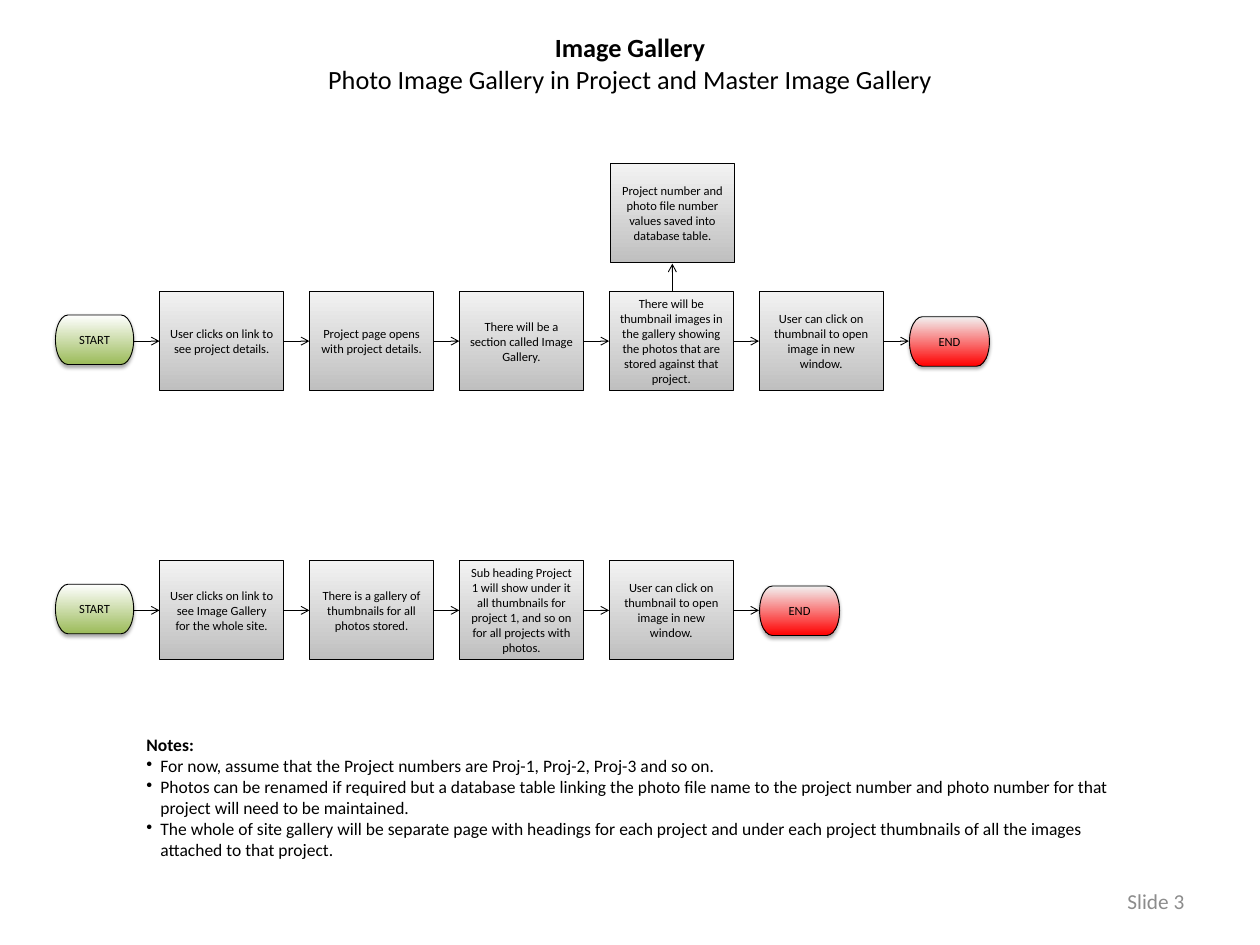
from lxml import etree
from pptx import Presentation
from pptx.dml.color import RGBColor
from pptx.enum.shapes import MSO_CONNECTOR, MSO_SHAPE
from pptx.enum.text import MSO_ANCHOR, MSO_AUTO_SIZE, PP_ALIGN
from pptx.oxml import parse_xml
from pptx.oxml.ns import qn
from pptx.util import Pt

PROCESS = MSO_SHAPE.FLOWCHART_PROCESS
TERMINATOR = MSO_SHAPE.FLOWCHART_TERMINATOR
STRAIGHT = MSO_CONNECTOR.STRAIGHT
LEFT, CENTER, RIGHT = PP_ALIGN.LEFT, PP_ALIGN.CENTER, PP_ALIGN.RIGHT
TOP, MIDDLE = MSO_ANCHOR.TOP, MSO_ANCHOR.MIDDLE
NO_FIT = MSO_AUTO_SIZE.NONE

BLACK = RGBColor(0x00, 0x00, 0x00)
WHITE = RGBColor(0xFF, 0xFF, 0xFF)
GREEN = RGBColor(0x9B, 0xBB, 0x59)
RED = RGBColor(0xFF, 0x00, 0x00)
PALE_GRAY = RGBColor(0xF2, 0xF2, 0xF2)
MID_GRAY = RGBColor(0xBF, 0xBF, 0xBF)
NUMBER_GRAY = RGBColor(0x8C, 0x8C, 0x8C)

FONT = "Calibri"
STEP_WIDTH, STEP_HEIGHT, STEP_PITCH = 99.4, 79.2, 119.9
START_WIDTH, END_WIDTH, END_HEIGHT = 62.6, 64, 39.6
START_GAP = 20.6
BULLET_INDENT = 11.2

SHADOW = (
    '<a:outerShdw xmlns:a="http://schemas.openxmlformats.org/drawingml/2006/main" '
    'blurRad="39370" dist="22860" dir="5400000" rotWithShape="0">'
    '<a:srgbClr val="000000"><a:alpha val="35000"/></a:srgbClr></a:outerShdw>'
)


def write(frame, lines, size, color=BLACK, align=LEFT, anchor=TOP, bold_first=False):
    frame.word_wrap = True
    frame.auto_size = NO_FIT
    frame.vertical_anchor = anchor
    frame.margin_left = frame.margin_right = Pt(7.2)
    frame.margin_top = frame.margin_bottom = Pt(3.6)
    frame.text = "\n".join(lines)
    for index, para in enumerate(frame.paragraphs):
        para.alignment = align
        para.font.name = FONT
        para.font.size = Pt(size)
        para.font.color.rgb = color
        para.font.bold = bold_first and index == 0


def add_node(page, kind, box, text, top_color, bottom_color):
    node = page.shapes.add_shape(kind, *map(Pt, box))
    node.shadow.inherit = False
    node.fill.gradient()
    node.fill.gradient_angle = 270
    for stop, color in zip(node.fill.gradient_stops, (top_color, bottom_color)):
        stop.color.rgb = color
    node.line.color.rgb = BLACK
    node.line.width = Pt(0.75)
    write(node.text_frame, [text], 10, align=CENTER, anchor=MIDDLE)
    return node


def add_step(page, left, top, text):
    add_node(page, PROCESS, (left, top, STEP_WIDTH, STEP_HEIGHT), text, PALE_GRAY, MID_GRAY)


def add_terminator(page, box, text, top_color, bottom_color):
    node = add_node(page, TERMINATOR, box, text, top_color, bottom_color)
    node._element.spPr.find(qn("a:effectLst")).append(parse_xml(SHADOW))


def add_arrow(page, *ends):
    arrow = page.shapes.add_connector(STRAIGHT, *map(Pt, ends))
    arrow.line.color.rgb = BLACK
    arrow.line.width = Pt(0.75)
    properties = arrow._element.spPr
    etree.SubElement(properties.find(qn("a:ln")), qn("a:tailEnd"), type="arrow")
    etree.SubElement(properties, qn("a:effectLst"))


def add_title(page, box, lines):
    title = page.shapes.title
    title.left, title.top, title.width, title.height = map(Pt, box)
    write(title.text_frame, lines, 21, align=CENTER, bold_first=True)


def add_flow(page, left, top, steps):
    middle = top + STEP_HEIGHT / 2
    first = left + START_WIDTH + START_GAP
    add_terminator(page, (left, top + 18.7, START_WIDTH, END_HEIGHT), "START", WHITE, GREEN)
    add_arrow(page, left + START_WIDTH, middle, first, middle)
    for index, text in enumerate(steps):
        step_left = first + index * STEP_PITCH
        add_step(page, step_left, top, text)
        add_arrow(page, step_left + STEP_WIDTH, middle, step_left + STEP_PITCH, middle)
    end_left = first + len(steps) * STEP_PITCH + 0.5
    add_terminator(page, (end_left, top + 20.1, END_WIDTH, END_HEIGHT), "END", PALE_GRAY, RED)


def add_database_step(page, left, top, text):
    center = left + STEP_WIDTH / 2
    add_step(page, left, top, text)
    add_arrow(page, center, top + 101.8, center, top + STEP_HEIGHT + 0.5)


def add_notes(page, box, heading, notes):
    frame = page.shapes.add_textbox(*map(Pt, box)).text_frame
    write(frame, [heading, *notes], 14, bold_first=True)
    for para in frame.paragraphs[1:]:
        properties = para._p.get_or_add_pPr()
        properties.set("marL", str(Pt(BULLET_INDENT)))
        properties.set("indent", str(-Pt(BULLET_INDENT)))
        bullet = properties.makeelement(qn("a:buChar"), {"char": "•"})
        properties.find(qn("a:defRPr")).addprevious(bullet)


def add_slide_number(page, box, text):
    frame = page.shapes.add_textbox(*map(Pt, box)).text_frame
    write(frame, [text], 17, NUMBER_GRAY, RIGHT, MIDDLE)
    frame.margin_left = frame.margin_right = Pt(10)


def main():
    deck = Presentation()
    deck.slide_width, deck.slide_height = Pt(1008), Pt(756)
    page = deck.slides.add_slide(deck.slide_layouts[5])
    add_title(page, (0, 21.6, 1008, 58.3), [
        "Image Gallery",
        "Photo Image Gallery in Project and Master Image Gallery",
    ])
    add_flow(page, 44.4, 233.3, [
        "User clicks on link to see project details.",
        "Project page opens with project details.",
        "There will be a section called Image Gallery.",
        "There will be thumbnail images in the gallery showing the photos "
        "that are stored against that project.",
        "User can click on thumbnail to open image in new window.",
    ])
    add_database_step(page, 488.2, 131.2,
                      "Project number and photo file number values saved into database table.")
    add_flow(page, 44.4, 448.7, [
        "User clicks on link to see Image Gallery for the whole site.",
        "There is a gallery of thumbnails for all photos stored.",
        "Sub heading Project 1 will show under it all thumbnails for project 1, "
        "and so on for all projects with photos.",
        "User can click on thumbnail to open image in new window.",
    ])
    add_notes(page, (110, 584, 788.4, 108.7), "Notes:", [
        "For now, assume that the Project numbers are Proj-1, Proj-2, Proj-3 and so on.",
        "Photos can be renamed if required but a database table linking the photo file name "
        "to the project number and photo number for that project will need to be maintained.",
        "The whole of site gallery will be separate page with headings for each project and "
        "under each project thumbnails of all the images attached to that project.",
    ])
    add_slide_number(page, (722.2, 700.6, 235.4, 40.3), "Slide 3")
    deck.save("out.pptx")


if __name__ == "__main__":
    main()
